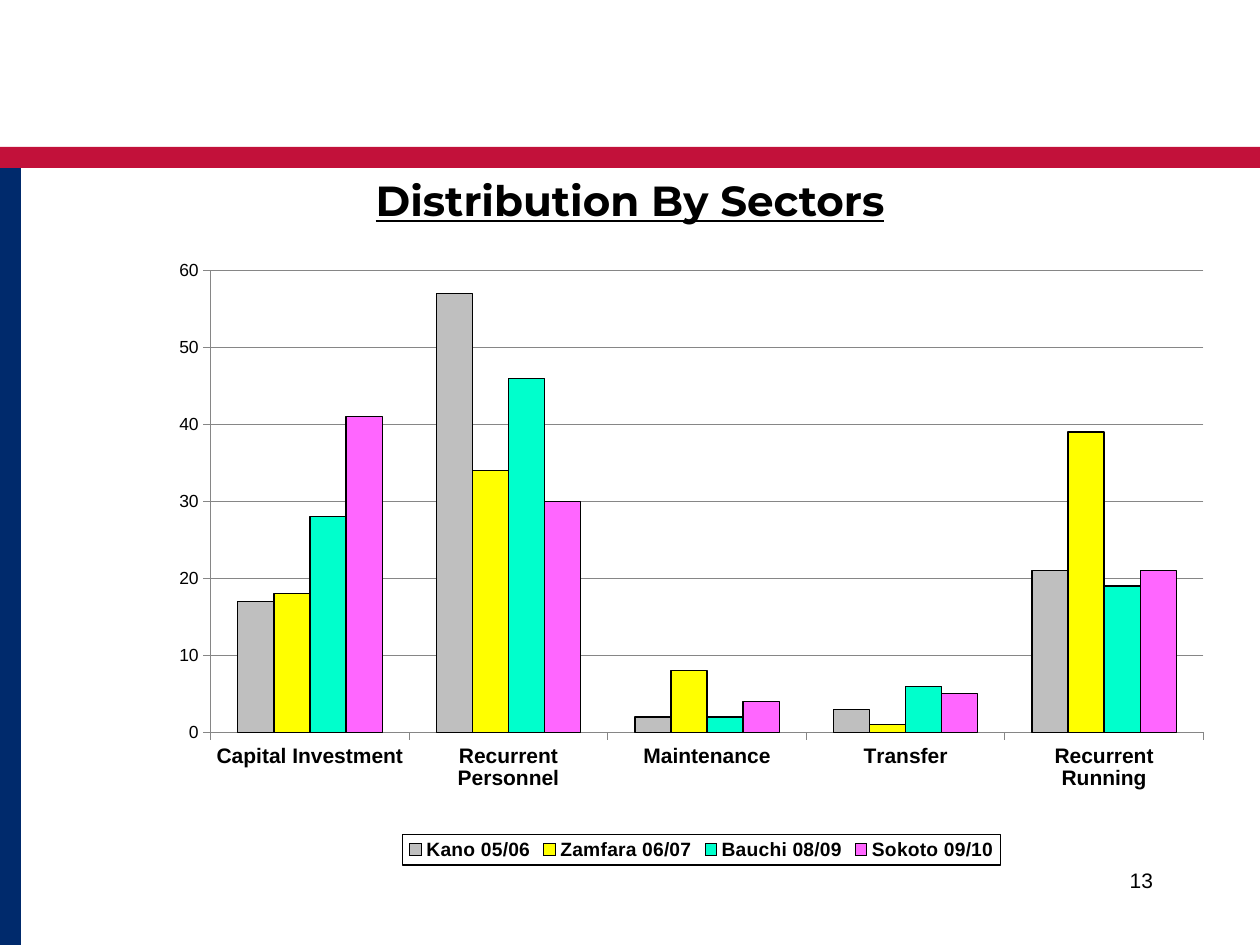
"""Build the slide on budget distribution by sectors."""
import pptx
import pptx.chart.data
import pptx.dml.color
import pptx.enum.chart
import pptx.enum.shapes
import pptx.enum.text
import pptx.oxml
import pptx.util

Pt = pptx.util.Pt
Enum = pptx.enum.chart
Text = pptx.enum.text
HUES = {"red": "C2113A", "navy": "002A6C", "black": "000000", "rule": "868686",
        "grey": "BFBFBF", "yellow": "FFFF00", "mint": "00FFCC", "pink": "FF66FF"}
TITLE = "Distribution By Sectors"
NUMBER = "13"
BANDS = [("red", (0, 84, 720, 12)), ("navy", (0, 96, 12, 444))]
SECTORS = ["Capital Investment", "Recurrent Personnel", "Maintenance",
           "Transfer", "Recurrent Running"]
STATES = [("Kano 05/06", "grey", (17, 57, 2, 3, 21)),
          ("Zamfara 06/07", "yellow", (18, 34, 8, 1, 39)),
          ("Bauchi 08/09", "mint", (28, 46, 2, 6, 19)),
          ("Sokoto 09/10", "pink", (41, 30, 4, 5, 21))]
PLACES = {"title": (54, 96, 612, 48), "chart": (96, 144, 610, 352),
          "number": (516, 492, 150, 36)}
PLOT = {"x": 0.04, "y": 0.03, "w": 0.93, "h": 0.75}
KEY = {"x": 0.22, "y": 0.95, "w": 0.56, "h": 0.05}
FONTS = {"title": {"name": "Montserrat", "size": Pt(24), "bold": True, "underline": True},
         "chart": {"name": "Arial", "size": Pt(10), "bold": False},
         "sector": {"name": "Arial", "size": Pt(12), "bold": True},
         "key": {"name": "Arial", "size": Pt(11), "bold": True},
         "number": {"name": "Arial", "size": Pt(12)}}
SPACE = ('xmlns:c="http://schemas.openxmlformats.org/drawingml/2006/chart" '
         'xmlns:a="http://schemas.openxmlformats.org/drawingml/2006/main"')


def put(item, values):
    for name, value in values.items():
        setattr(item, name, value)


def hue(name):
    return pptx.dml.color.RGBColor.from_string(HUES[name])


def style(font, kind):
    put(font, FONTS[kind])
    font.color.rgb = hue("black")


def paint(form, name):
    form.fill.solid()
    form.fill.fore_color.rgb = hue(name)


def draw(line, name):
    line.width = Pt(0.75)
    line.color.rgb = hue(name)


def box(name):
    return [Pt(size) for size in PLACES[name]]


def write(shape, words, kind, align):
    frame = shape.text_frame
    put(frame, {"text": words, "word_wrap": True, "vertical_anchor": Text.MSO_ANCHOR.TOP,
                "auto_size": Text.MSO_AUTO_SIZE.NONE})
    frame.paragraphs[0].alignment = align
    style(frame.paragraphs[0].runs[0].font, kind)


def place(part, index, spots, inner=""):
    for old in part.xpath("c:layout"):
        part.remove(old)
    modes = "".join(f'<c:{side}Mode val="edge"/>' for side in "xy")
    sizes = "".join(f'<c:{side} val="{size}"/>' for side, size in spots.items())
    part.insert(index, pptx.oxml.parse_xml(
        f"<c:layout {SPACE}><c:manualLayout>{inner}{modes}{sizes}"
        "</c:manualLayout></c:layout>"))


def add_chart(slide):
    data = pptx.chart.data.CategoryChartData(number_format="General")
    data.categories = SECTORS
    for name, _, values in STATES:
        data.add_series(name, values)
    chart = slide.shapes.add_chart(
        Enum.XL_CHART_TYPE.COLUMN_CLUSTERED, *box("chart"), data).chart
    style(chart.font, "chart")
    put(chart, {"has_title": False, "has_legend": True})
    plot = chart.plots[0]
    put(plot, {"gap_width": 150, "overlap": 0, "vary_by_categories": False})
    for bars, (_, name, _) in zip(plot.series, STATES):
        paint(bars.format, name)
        draw(bars.format.line, "black")
        bars.invert_if_negative = False
    for axis in (chart.category_axis, chart.value_axis):
        put(axis, {"major_tick_mark": Enum.XL_TICK_MARK.OUTSIDE,
                   "minor_tick_mark": Enum.XL_TICK_MARK.NONE})
        draw(axis.format.line, "rule")
    style(chart.category_axis.tick_labels.font, "sector")
    scale = chart.value_axis
    put(scale, {"minimum_scale": 0, "maximum_scale": 60, "major_unit": 10,
                "has_major_gridlines": True})
    draw(scale.major_gridlines.format.line, "rule")
    put(scale.tick_labels, {"number_format": "#,##0", "number_format_is_linked": False})
    key = chart.legend
    put(key, {"position": Enum.XL_LEGEND_POSITION.BOTTOM, "include_in_layout": False})
    style(key.font, "key")
    area = chart.element.xpath("//c:plotArea")[0]
    place(area, 0, PLOT, '<c:layoutTarget val="inner"/>')
    node = chart.element.xpath("//c:legend")[0]
    place(node, 1, KEY)
    node.xpath("c:overlay")[0].addnext(pptx.oxml.parse_xml(
        f'<c:spPr {SPACE}><a:ln w="9525"><a:solidFill><a:srgbClr val="{HUES["black"]}"/>'
        "</a:solidFill></a:ln></c:spPr>"))


def main():
    deck = pptx.Presentation()
    put(deck, {"slide_width": Pt(720), "slide_height": Pt(540)})
    slide = deck.slides.add_slide(deck.slide_layouts[5])
    for name, spot in BANDS:
        band = slide.shapes.add_shape(
            pptx.enum.shapes.MSO_SHAPE.RECTANGLE, *[Pt(size) for size in spot])
        band.shadow.inherit = False
        paint(band, name)
        band.line.fill.background()
    title = slide.shapes.title
    put(title, dict(zip(("left", "top", "width", "height"), box("title"))))
    write(title, TITLE, "title", Text.PP_ALIGN.CENTER)
    add_chart(slide)
    number = slide.shapes.add_textbox(*box("number"))
    write(number, NUMBER, "number", Text.PP_ALIGN.RIGHT)
    deck.save("out.pptx")


if __name__ == "__main__":
    main()
